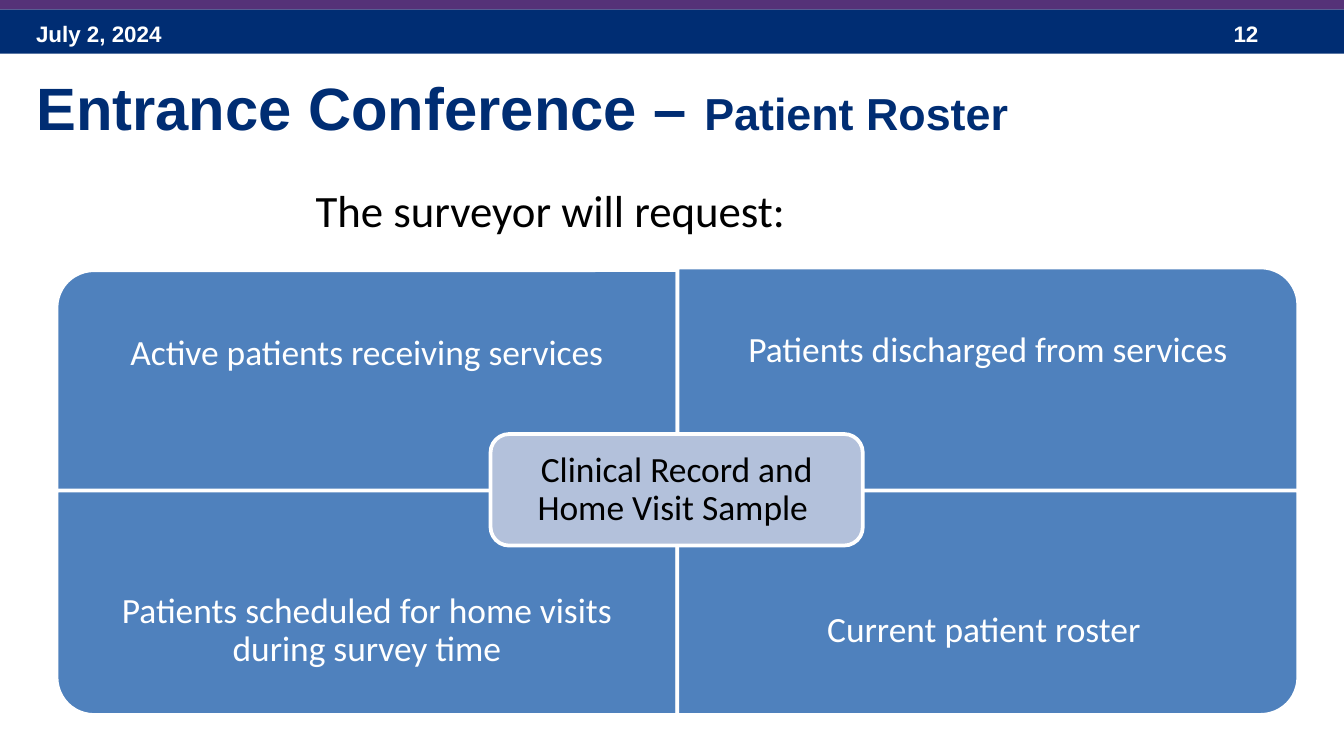
import pptx
import pptx.util
from pptx.dml.color import RGBColor
from pptx.enum.shapes import MSO_SHAPE
from pptx.enum.text import MSO_ANCHOR, PP_ALIGN
from pptx.util import Inches, Pt

NAVY, PURPLE, BLUE, PALE = "002D73", "553278", "4F81BD", "B3C1DB"
WHITE, BLACK = "FFFFFF", "000000"

BANDS = [((0, 0.07, 10, 0.33), NAVY), ((0, -0.02, 10, 0.09), PURPLE)]
HEADER = [("July 2, 2024", (0.17, 0.1, 2.33, 0.3)), ("12", (9.08, 0.1, 0.75, 0.3))]
TITLE = [("Entrance Conference – ", 32), ("Patient Roster", 24)]
LEAD = "The surveyor will request:"
CENTER = "Clinical Record and Home Visit Sample "

# text, column, top, rotation that turns the rounded corner outwards
QUADRANTS = [
    ("Active patients receiving services", 0, 2.01, 270),
    ("Patients discharged from services", 1, 1.99, 0),
    ("Patients scheduled for home visits during survey time", 0, 3.65, 180),
    ("Current patient roster ", 1, 3.65, 90),
]
LEFT, WIDTH, HEIGHT, TEXT_HEIGHT = 0.42, 4.62, 1.67, 1.25
CENTER_BOX, CENTER_INSET = (3.65, 3.23, 2.77, 0.83), 0.04


def color(value):
    return RGBColor.from_string(value)


def set_font(font, size, name, value, bold=False):
    font.size, font.name, font.bold = Pt(size), name, bold
    font.color.rgb = color(value)


def add_shape(slide, kind, box, fill, line=None):
    shape = slide.shapes.add_shape(kind, *map(Inches, box))
    shape.shadow.inherit = False
    shape.fill.solid()
    shape.fill.fore_color.rgb = color(fill)
    if line:
        shape.line.color.rgb = color(line)
        shape.line.width = Pt(2)
    else:
        shape.line.fill.background()
    return shape


def add_text(slide, text, box, size, name, value, bold=False):
    frame = slide.shapes.add_textbox(*map(Inches, box)).text_frame
    frame.word_wrap = True
    paragraph = frame.paragraphs[0]
    paragraph.text = text
    set_font(paragraph.font, size, name, value, bold)
    return frame


def add_label(slide, text, box, inset, value):
    """Add the centred text of one part of the matrix."""
    frame = add_text(slide, text, box, 19, "Calibri", value)
    frame.vertical_anchor = MSO_ANCHOR.MIDDLE
    frame.margin_left = frame.margin_right = Inches(inset)
    frame.margin_top = frame.margin_bottom = Inches(inset)
    frame.paragraphs[0].alignment = PP_ALIGN.CENTER
    frame.paragraphs[0].line_spacing = 0.9


def add_title(slide):
    title = slide.shapes.title
    title.left, title.top = Inches(0.17), Inches(0.48)
    title.width, title.height = Inches(9.5), Inches(0.64)
    frame = title.text_frame
    frame.vertical_anchor = MSO_ANCHOR.TOP
    paragraph = frame.paragraphs[0]
    paragraph.alignment = PP_ALIGN.LEFT
    for text, size in TITLE:
        run = paragraph.add_run()
        run.text = text
        set_font(run.font, size, "Arial", NAVY, True)


def add_quadrant(slide, text, column, top, rotation):
    left = LEFT + column * WIDTH
    # A quarter turn swaps the sides around the same centre.
    width, height = (HEIGHT, WIDTH) if rotation % 180 else (WIDTH, HEIGHT)
    box = (left + (WIDTH - width) / 2, top + (HEIGHT - height) / 2, width, height)
    shape = add_shape(slide, MSO_SHAPE.ROUND_1_RECTANGLE, box, BLUE, WHITE)
    shape.rotation = rotation
    is_lower = rotation in (90, 180)
    text_top = top + HEIGHT - TEXT_HEIGHT if is_lower else top
    add_label(slide, text, (left, text_top, WIDTH, TEXT_HEIGHT), 0.15, WHITE)


def main():
    presentation = pptx.Presentation()
    presentation.slide_width = Inches(10)
    presentation.slide_height = Inches(10 * 9 / 16)
    slide = presentation.slides.add_slide(presentation.slide_layouts[5])

    for box, fill in BANDS:
        add_shape(slide, MSO_SHAPE.RECTANGLE, box, fill)
    for text, box in HEADER:
        add_text(slide, text, box, 12, "Arial", WHITE, True)
    add_title(slide)
    add_text(slide, LEAD, (2.25, 1.31, 5.83, 0.5), 24, "Calibri", BLACK)

    for quadrant in QUADRANTS:
        add_quadrant(slide, *quadrant)
    add_shape(slide, MSO_SHAPE.ROUNDED_RECTANGLE, CENTER_BOX, PALE, WHITE)
    left, top, width, height = CENTER_BOX
    inner = (left + CENTER_INSET, top + CENTER_INSET,
             width - 2 * CENTER_INSET, height - 2 * CENTER_INSET)
    add_label(slide, CENTER, inner, 0.08, BLACK)

    presentation.save("out.pptx")


if __name__ == "__main__":
    main()
